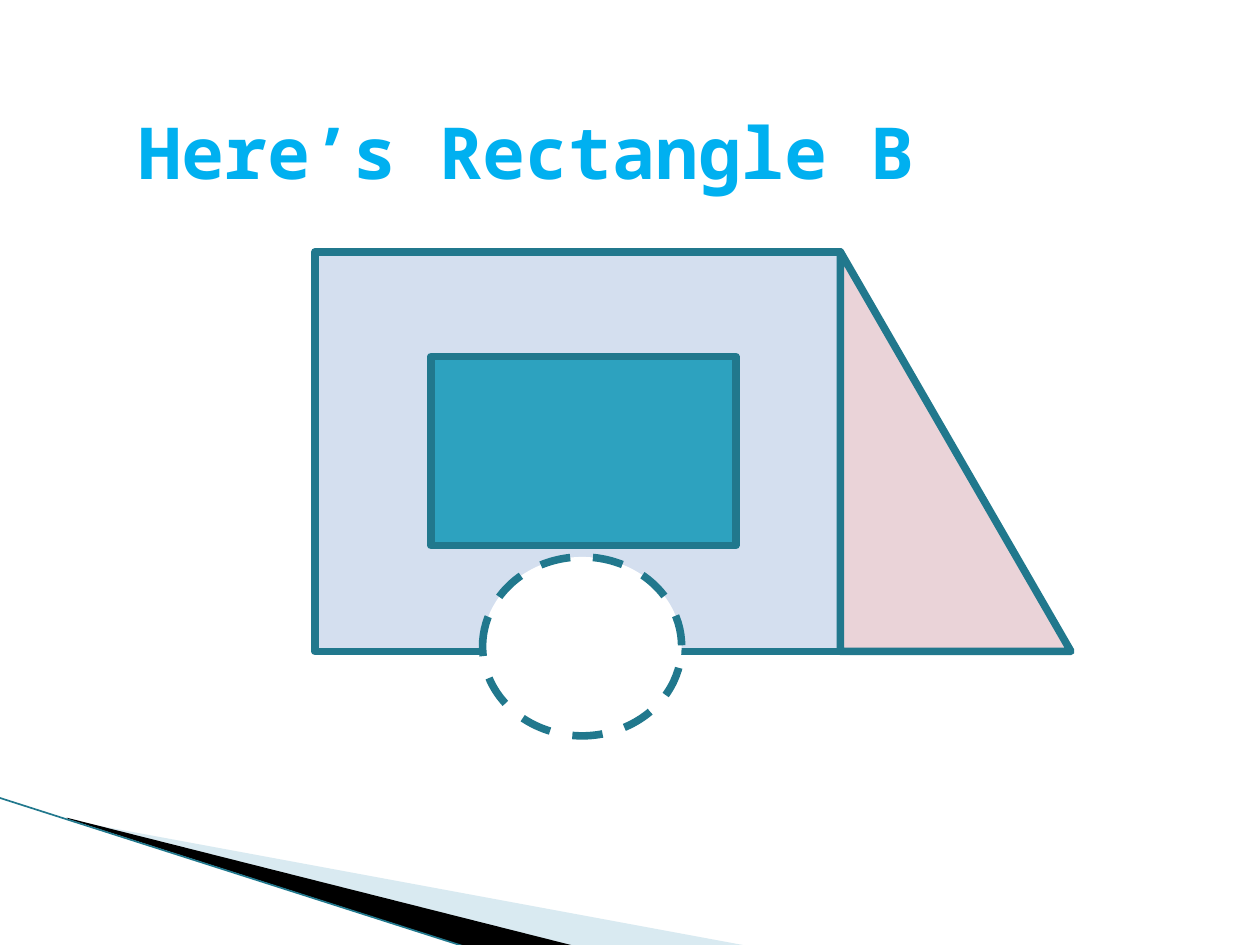
from lxml.etree import SubElement
from pptx import Presentation
from pptx.dml.color import RGBColor
from pptx.enum.dml import MSO_LINE
from pptx.enum.shapes import MSO_CONNECTOR, MSO_SHAPE
from pptx.enum.text import MSO_ANCHOR, PP_ALIGN
from pptx.oxml.ns import qn
from pptx.util import Inches, Pt


def color(hex_string):
    return RGBColor.from_string(hex_string)


class SlideBuilder:
    font_name = "Noto Sans Mono"
    title_color = "00B0F0"
    outline_color = "21788D"
    outline_width = 4.33

    def __init__(self, slide):
        self.slide = slide

    def title(self, text, left, top, width, height):
        shape = self.slide.shapes.title
        shape.left, shape.top = Inches(left), Inches(top)
        shape.width, shape.height = Inches(width), Inches(height)
        frame = shape.text_frame
        frame.text = text
        frame.word_wrap = True
        frame.vertical_anchor = MSO_ANCHOR.MIDDLE
        paragraph = frame.paragraphs[0]
        paragraph.alignment = PP_ALIGN.LEFT
        font = paragraph.font
        font.name, font.size, font.bold = self.font_name, Pt(41), True
        font.color.rgb = color(self.title_color)

    def fill(self, shape, fill_color):
        shape.shadow.inherit = False
        shape.fill.solid()
        shape.fill.fore_color.rgb = color(fill_color)

    def outlined(self, kind, left, top, width, height, fill_color, dash=None):
        shape = self.slide.shapes.add_shape(
            kind, Inches(left), Inches(top), Inches(width), Inches(height))
        self.fill(shape, fill_color)
        shape.line.color.rgb = color(self.outline_color)
        shape.line.width = Pt(self.outline_width)
        if dash:
            shape.line.dash_style = dash

    def polygon(self, points, fill_color, opacity=None):
        start, *rest = [(Inches(x), Inches(y)) for x, y in points]
        builder = self.slide.shapes.build_freeform(*start)
        builder.add_line_segments(rest, close=True)
        shape = builder.convert_to_shape()
        self.fill(shape, fill_color)
        shape.line.fill.background()
        if opacity is not None:
            fill_element = shape.fill._xPr.find(qn("a:solidFill"))
            SubElement(fill_element[0], qn("a:alpha"), val=str(opacity * 1000))

    def line(self, x1, y1, x2, y2, width):
        connector = self.slide.shapes.add_connector(
            MSO_CONNECTOR.STRAIGHT, Inches(x1), Inches(y1), Inches(x2), Inches(y2))
        connector.line.color.rgb = color(self.outline_color)
        connector.line.width = Pt(width)
        SubElement(connector._element.spPr, qn("a:effectLst"))


def main():
    presentation = Presentation()
    presentation.slide_width, presentation.slide_height = Inches(10), Inches(7.5)
    slide = presentation.slides.add_slide(presentation.slide_layouts[5])
    builder = SlideBuilder(slide)

    # Corner decoration
    builder.polygon([(0.55, 6.51), (5.95, 7.51), (4.56, 7.51), (0.55, 6.5)],
                    "A0CBDC", opacity=40)
    builder.polygon([(0.53, 6.49), (4.57, 7.51), (3.72, 7.52), (0.54, 6.5)], "000000")
    builder.line(-0.01, 6.33, 3.71, 7.52, 0.95)

    # Title
    builder.title("Here’s Rectangle B", 1, 0.42, 7.83, 1.55)

    # Compound figure: large rectangle, triangle, cut-out circle, rectangle B
    builder.outlined(MSO_SHAPE.RECTANGLE, 2.5, 2, 4.17, 3.17, "D4DFEF")
    builder.outlined(MSO_SHAPE.RIGHT_TRIANGLE, 6.67, 2, 1.83, 3.17, "EAD3D8")
    builder.outlined(MSO_SHAPE.OVAL, 3.83, 4.42, 1.58, 1.42, "FFFFFF", MSO_LINE.DASH)
    builder.outlined(MSO_SHAPE.RECTANGLE, 3.42, 2.83, 2.42, 1.5, "2DA2BF")

    presentation.save("out.pptx")


if __name__ == "__main__":
    main()
